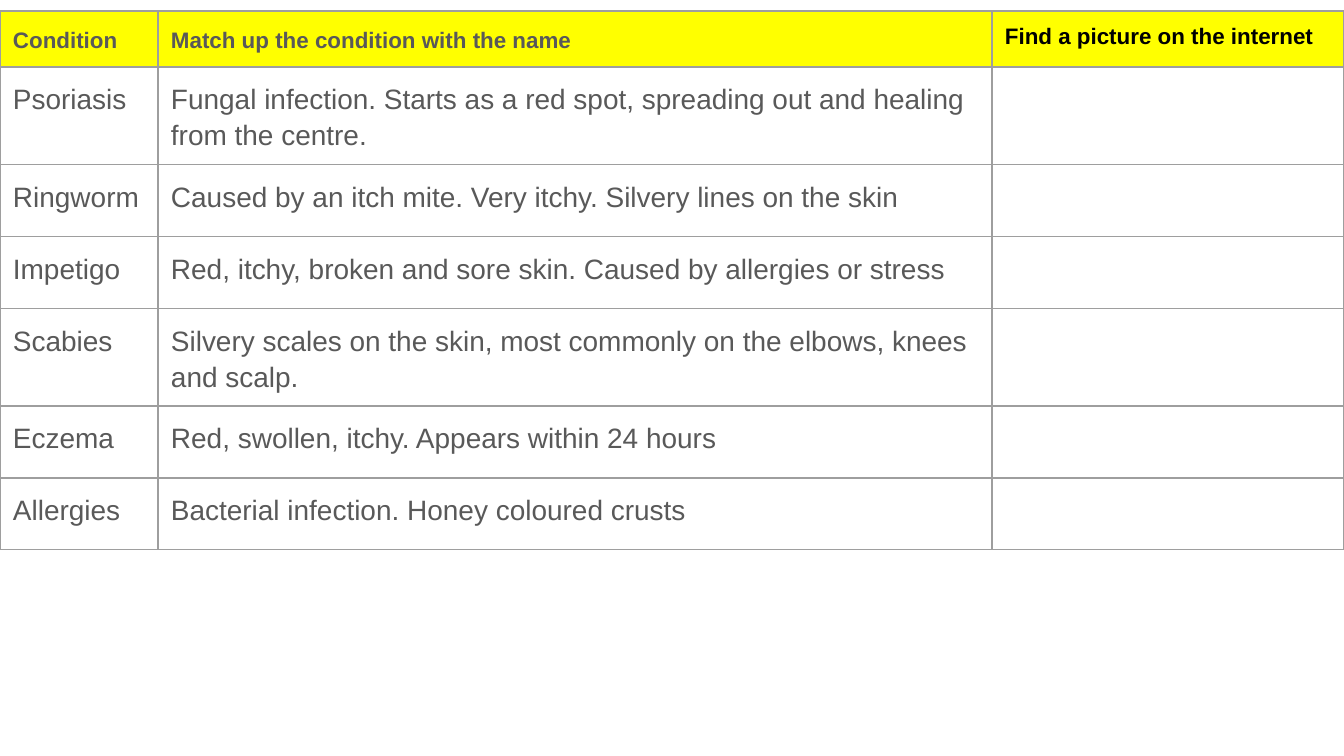
from lxml.etree import SubElement
from pptx import Presentation
from pptx.dml.color import RGBColor
from pptx.oxml.ns import qn
from pptx.util import Pt

EMU_PER_INCH = 914400
PX_PER_INCH = 134.4
FONT = "Arial"
GREY, BLACK, YELLOW, BORDER = "595959", "000000", "FFFF00", "9E9E9E"
COLUMN_WIDTHS = [158, 834, 352]
HEADER_HEIGHT, ROW_HEIGHT = 56, 72
CELL_MARGIN = 13
HEADERS = ["Condition", "Match up the condition with the name", "Find a picture on the internet"]
CONDITIONS = [
    ("Psoriasis", "Fungal infection. Starts as a red spot, spreading out and healing from the centre."),
    ("Ringworm", "Caused by an itch mite. Very itchy. Silvery lines on the skin"),
    ("Impetigo", "Red, itchy, broken and sore skin. Caused by allergies or stress"),
    ("Scabies", "Silvery scales on the skin, most commonly on the elbows, knees and scalp."),
    ("Eczema", "Red, swollen, itchy. Appears within 24 hours"),
    ("Allergies", "Bacterial infection. Honey coloured crusts"),
]


def px(length):
    """Turn pixels into EMU."""
    return round(length * EMU_PER_INCH / PX_PER_INCH)


def color(hex_value):
    """Turn a hex string into a colour."""
    return RGBColor.from_string(hex_value)


def add_borders(cell):
    """Draw a thin grey line on all four sides of a cell."""
    properties = cell._tc.get_or_add_tcPr()
    for index, side in enumerate(("a:lnL", "a:lnR", "a:lnT", "a:lnB")):
        line = SubElement(properties, qn(side), w=str(Pt(0.75)))
        fill = SubElement(line, qn("a:solidFill"))
        SubElement(fill, qn("a:srgbClr"), val=BORDER)
        properties.remove(line)
        properties.insert(index, line)


def style_cell(cell, fill=None):
    """Set the margins, fill and borders of a cell."""
    cell.margin_left = cell.margin_right = px(CELL_MARGIN)
    cell.margin_top = cell.margin_bottom = px(CELL_MARGIN)
    if fill:
        cell.fill.solid()
        cell.fill.fore_color.rgb = color(fill)
    else:
        cell.fill.background()
    add_borders(cell)


def write_cell(cell, text, size, font_color=GREY, bold=False, spacing=1.15):
    """Write one formatted paragraph into a cell."""
    cell.text_frame.text = text
    paragraph = cell.text_frame.paragraphs[0]
    paragraph.line_spacing = spacing
    font = paragraph.runs[0].font
    font.name, font.size, font.bold = FONT, Pt(size), bold
    font.color.rgb = color(font_color)


def add_condition_table(slide, left, top, width):
    """Place the table of skin conditions in the given box."""
    height = HEADER_HEIGHT + ROW_HEIGHT * len(CONDITIONS)
    shape = slide.shapes.add_table(
        len(CONDITIONS) + 1, len(HEADERS), px(left), px(top), px(width), px(height))
    table = shape.table
    table.horz_banding = False
    for column, column_width in zip(table.columns, COLUMN_WIDTHS):
        column.width = px(column_width * width / sum(COLUMN_WIDTHS))
    for index, row in enumerate(table.rows):
        row.height = px(ROW_HEIGHT if index else HEADER_HEIGHT)
        for cell in row.cells:
            style_cell(cell, None if index else YELLOW)
    for index, header in enumerate(HEADERS):
        is_last = index == len(HEADERS) - 1
        write_cell(table.cell(0, index), header, 12, BLACK if is_last else GREY,
                   bold=True, spacing=1.0 if is_last else 1.15)
    for row_index, condition in enumerate(CONDITIONS, 1):
        for column_index, text in enumerate(condition):
            write_cell(table.cell(row_index, column_index), text, 15)


def main():
    """Build and save the presentation."""
    presentation = Presentation()
    presentation.slide_width, presentation.slide_height = px(1344), px(756)
    slide = presentation.slides.add_slide(presentation.slide_layouts[6])
    add_condition_table(slide, 0, 11, 1344)
    presentation.save("out.pptx")


if __name__ == "__main__":
    main()
